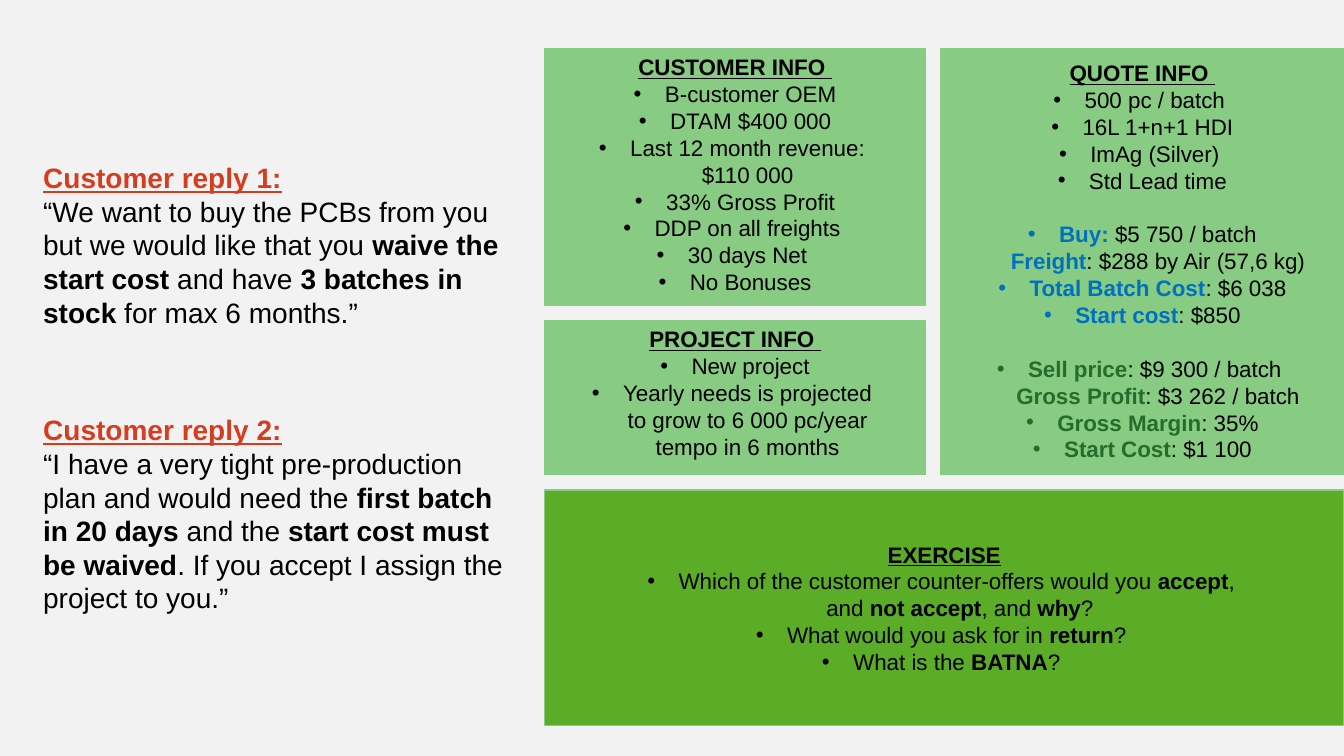
from lxml import etree
from pptx import Presentation
from pptx.dml.color import RGBColor
from pptx.enum.shapes import MSO_SHAPE
from pptx.enum.text import MSO_ANCHOR, PP_ALIGN
from pptx.oxml.ns import qn
from pptx.util import Inches, Pt

RECTANGLE = MSO_SHAPE.RECTANGLE
TOP, MIDDLE = MSO_ANCHOR.TOP, MSO_ANCHOR.MIDDLE
LEFT, CENTER = PP_ALIGN.LEFT, PP_ALIGN.CENTER

COLORS = {
    "background": "F2F2F2",
    "panel": "88CB83",
    "exercise": "5BAC26",
    "text": "000000",
    "reply": "D53D20",
    "buy": "0070C0",
    "sell": "266D2B",
}
FONT = "Arial"
PANEL_SIZE, REPLY_SIZE = 16, 20
LINE_HEIGHT = 1.2
INDENT = 0.31

WIDTH, HEIGHT = 13.33, 7.5
GAP = 0.15
COLUMN_1, COLUMN_1_WIDTH = 5.4, 3.78
COLUMN_2 = COLUMN_1 + COLUMN_1_WIDTH + GAP
COLUMN_2_WIDTH = WIDTH - COLUMN_2
ROW_1, ROW_1_HEIGHT = 0.48, 2.55
ROW_2, ROW_2_HEIGHT = ROW_1 + ROW_1_HEIGHT + GAP, 1.53
ROW_3, ROW_3_HEIGHT = ROW_2 + ROW_2_HEIGHT + GAP, 2.34

# Text between ** marks is bold.
CUSTOMER = [
    "B-customer OEM",
    "DTAM $400 000",
    "Last 12 month revenue: \n$110 000 ",
    "33% Gross Profit",
    "DDP on all freights ",
    "30 days Net ",
    "No Bonuses",
]
PROJECT = [
    "New project",
    "Yearly needs is projected \nto grow to 6 000 pc/year \ntempo in 6 months ",
]
QUOTE = ["500 pc / batch ", "16L 1+n+1 HDI", "ImAg (Silver) ", "Std Lead time"]
BUY = [
    "**Buy: **$5 750 / batch\n**Freight**: $288 by Air (57,6 kg)",
    "**Total Batch Cost**: $6 038",
    "**Start cost**: $850",
]
SELL = [
    "**Sell price**: $9 300 / batch \n**Gross Profit**: $3 262 / batch",
    "**Gross Margin**: 35%",
    "**Start Cost**: $1 100",
]
EXERCISE = [
    "Which of the customer counter-offers would you **accept**, \n"
    "and **not accept**, and **why**?",
    "What would you ask for in **return**? ",
    "What is the **BATNA**? ",
]
REPLIES = [
    ("Customer reply 1:",
     "“We want to buy the PCBs from you but we would like that you **waive the "
     "start cost** and have **3 batches in stock **for max 6 months.”"),
    ("Customer reply 2:",
     "“I have a very tight pre-production plan and would need the **first batch "
     "in 20 days **and the **start cost must be waived**. If you accept I assign "
     "the project to you.”"),
]


def color(name):
    return RGBColor.from_string(COLORS[name])


def add_rectangle(slide, box, fill, line=None):
    shape = slide.shapes.add_shape(RECTANGLE, *map(Inches, box))
    shape.shadow.inherit = False
    shape.fill.solid()
    shape.fill.fore_color.rgb = color(fill)
    if line:
        shape.line.color.rgb = color(line)
        shape.line.width = Pt(1)
    else:
        shape.line.fill.background()
    return shape


def add_text_box(slide, box):
    return slide.shapes.add_textbox(*map(Inches, box))


def add_bullet(paragraph):
    properties = paragraph._p.get_or_add_pPr()
    properties.set("marL", str(Inches(INDENT)))
    properties.set("indent", str(-Inches(INDENT)))
    etree.SubElement(properties, qn("a:buFont")).set("typeface", FONT)
    etree.SubElement(properties, qn("a:buChar")).set("char", "•")


def style(paragraph, size, align, color_name="text"):
    paragraph.alignment = align
    paragraph.font.name = FONT
    paragraph.font.size = Pt(size)
    paragraph.font.color.rgb = color(color_name)


def write_marked(paragraph, text, accent="text"):
    """Add runs, with the parts between ** marks bold and in the accent colour."""
    for index, part in enumerate(text.split("**")):
        for line_index, line in enumerate(part.split("\n")):
            if line_index:
                paragraph.add_line_break()
            if line:
                run = paragraph.add_run()
                run.text = line
                if index % 2:
                    run.font.bold = True
                    run.font.color.rgb = color(accent)


def write_heading(paragraph, text, size, align, color_name="text"):
    style(paragraph, size, align, color_name)
    paragraph.font.bold = True
    paragraph.font.underline = True
    paragraph.add_run().text = text


def write_list(shape, heading, groups, anchor=TOP):
    """Write a heading and groups of (accent, bullets), one line apart."""
    frame = shape.text_frame
    frame.word_wrap = True
    frame.vertical_anchor = anchor
    write_heading(frame.paragraphs[0], heading, PANEL_SIZE, CENTER)
    for group_index, (accent, bullets) in enumerate(groups):
        for index, text in enumerate(bullets):
            paragraph = frame.add_paragraph()
            if group_index and not index:
                paragraph.space_before = Pt(PANEL_SIZE * LINE_HEIGHT)
            add_bullet(paragraph)
            style(paragraph, PANEL_SIZE, CENTER)
            write_marked(paragraph, text, accent)


def add_replies(slide, box):
    frame = add_text_box(slide, box).text_frame
    frame.word_wrap = True
    frame.vertical_anchor = MIDDLE
    for index, (heading, quotation) in enumerate(REPLIES):
        paragraph = frame.add_paragraph() if index else frame.paragraphs[0]
        if index:
            paragraph.space_before = Pt(2 * REPLY_SIZE * LINE_HEIGHT)
        write_heading(paragraph, heading, REPLY_SIZE, LEFT, "reply")
        paragraph = frame.add_paragraph()
        paragraph.space_after = Pt(12)
        style(paragraph, REPLY_SIZE, LEFT)
        write_marked(paragraph, quotation)


def add_panel(slide, box, heading, bullets, fill="panel", anchor=TOP):
    shape = add_rectangle(slide, box, fill, "panel")
    write_list(shape, heading, [("text", bullets)], anchor)


def add_quote_panel(slide, box):
    left, top, width, height = box
    inset = 0.06
    add_rectangle(slide, box, "panel", "panel")
    text_box = add_text_box(slide, (left, top + inset, width, height - 2 * inset))
    write_list(text_box, "QUOTE INFO ", [("text", QUOTE), ("buy", BUY), ("sell", SELL)])


def main():
    presentation = Presentation()
    presentation.slide_width = Inches(WIDTH)
    presentation.slide_height = Inches(HEIGHT)
    slide = presentation.slides.add_slide(presentation.slide_layouts[6])
    add_rectangle(slide, (0, 0, WIDTH, HEIGHT), "background")
    add_panel(slide, (COLUMN_1, ROW_1, COLUMN_1_WIDTH, ROW_1_HEIGHT),
              "CUSTOMER INFO ", CUSTOMER)
    add_panel(slide, (COLUMN_1, ROW_2, COLUMN_1_WIDTH, ROW_2_HEIGHT),
              "PROJECT INFO ", PROJECT)
    add_quote_panel(slide, (COLUMN_2, ROW_1, COLUMN_2_WIDTH,
                            ROW_2 + ROW_2_HEIGHT - ROW_1))
    add_replies(slide, (0.33, 0.19, 4.83, HEIGHT - 0.19))
    add_panel(slide, (COLUMN_1, ROW_3, WIDTH - COLUMN_1, ROW_3_HEIGHT),
              "EXERCISE", EXERCISE, "exercise", MIDDLE)
    presentation.save("out.pptx")


if __name__ == "__main__":
    main()
